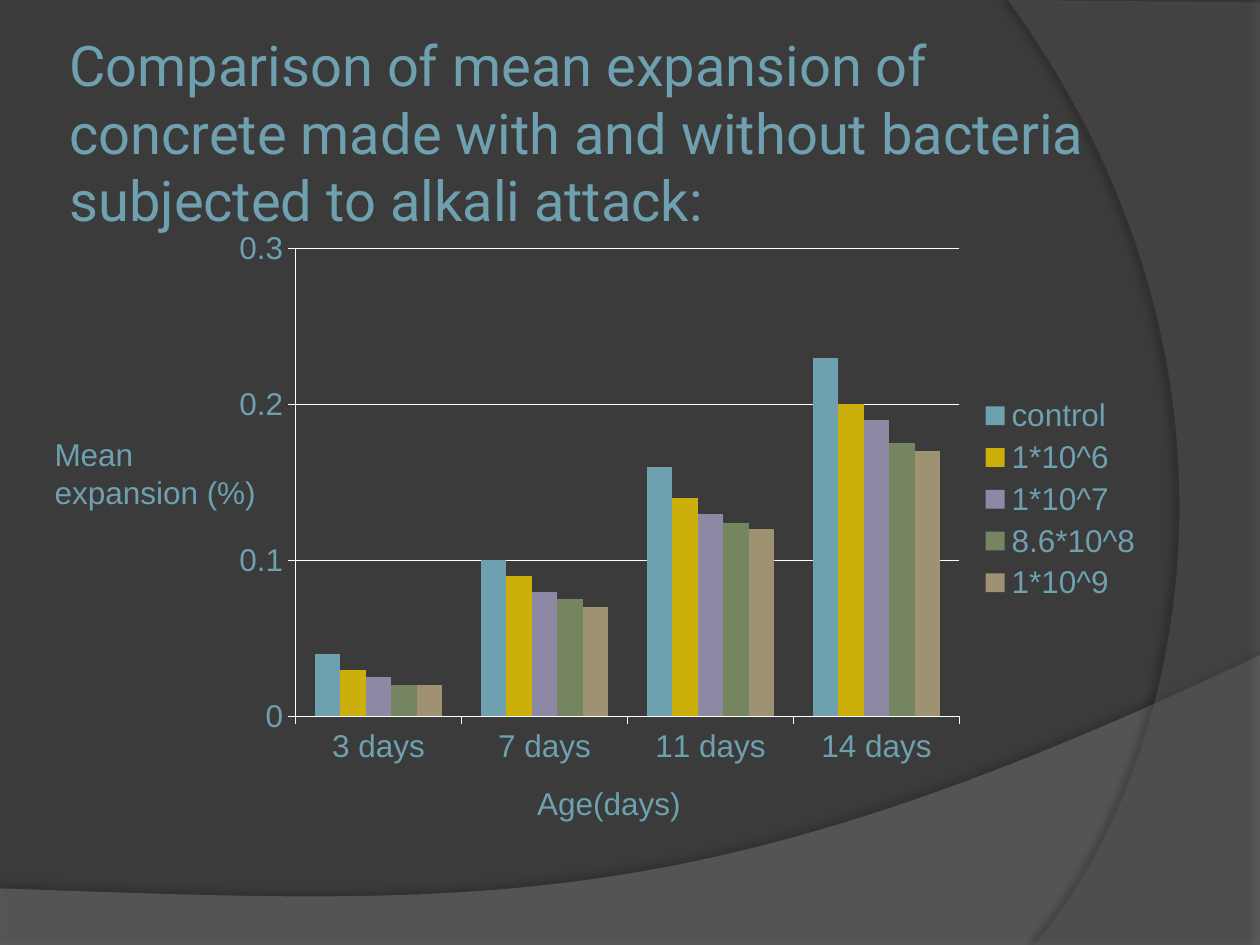
from dataclasses import dataclass

from lxml import etree
from pptx import Presentation
from pptx.chart.data import CategoryChartData
from pptx.dml.color import RGBColor
from pptx.enum.chart import XL_CHART_TYPE, XL_LEGEND_POSITION, XL_TICK_MARK
from pptx.enum.text import MSO_ANCHOR, MSO_AUTO_SIZE
from pptx.oxml import parse_xml
from pptx.oxml.ns import nsdecls, qn
from pptx.util import Cm, Pt

CLUSTERED = XL_CHART_TYPE.COLUMN_CLUSTERED
LEGEND_RIGHT = XL_LEGEND_POSITION.RIGHT
TICK_OUTSIDE, TICK_NONE = XL_TICK_MARK.OUTSIDE, XL_TICK_MARK.NONE
TOP, MIDDLE = MSO_ANCHOR.TOP, MSO_ANCHOR.MIDDLE
GROW, FIXED = MSO_AUTO_SIZE.SHAPE_TO_FIT_TEXT, MSO_AUTO_SIZE.NONE

Point = tuple[float, float]


@dataclass(frozen=True)
class Theme:
    background: str = "3B3B3B"
    text: str = "6EA0B0"
    rule: str = "FFFFFF"
    title_font: str = "Roboto"
    body_font: str = "Arial"
    title_size: int = 32
    body_size: int = 18


@dataclass(frozen=True)
class Swoosh:
    """Straight corners, then a Bezier curve back to the first one (cm)."""
    corners: list[Point]
    controls: tuple[Point, Point]
    end: Point
    color: str
    opacity: int
    shadow_opacity: int
    shadow_distance: float
    shadow_angle: int


@dataclass(frozen=True)
class Label:
    text: str
    box: tuple[float, float, float, float]
    font: str
    size: int
    anchor: MSO_ANCHOR = TOP
    auto_size: MSO_AUTO_SIZE = GROW
    inset: float = 0.25


@dataclass(frozen=True)
class Series:
    name: str
    values: tuple[float, ...]
    color: str


THEME = Theme()
SWOOSHES = [
    Swoosh([(0, 17.91), (0, 19.05), (25.4, 19.05), (25.4, 13.21)],
           ((14.2, 18.52), (9.93, 18.26)), (0, 17.91), "7F7F7F", 45, 35, 3.5, 270),
    Swoosh([(25.4, 0.05), (25.4, 19.05), (20.85, 19.05)],
           ((23.75, 15.72), (25.86, 7.62)), (20.32, 0), "5E5E5E", 40, 45, 4, 180),
]
TITLE = Label("Comparison of mean expansion of concrete made with and without "
              "bacteria subjected to alkali attack:", (1.27, 0.43, 20.75, 4.45),
              THEME.title_font, THEME.title_size, MIDDLE, FIXED, 0.13)
AXIS_LABELS = [
    Label("Mean expansion (%)", (0.85, 8.64, 4.65, 2.57), THEME.body_font, THEME.body_size),
    Label("Age(days)", (10.58, 15.67, 3.76, 1.02), THEME.body_font, THEME.body_size),
]
AGES = ["3 days", "7 days", "11 days", "14 days"]
MIXES = [
    Series("control", (0.04, 0.1, 0.16, 0.23), "6EA0B0"),
    Series("1*10^6", (0.03, 0.09, 0.14, 0.2), "CCAF0A"),
    Series("1*10^7", (0.025, 0.08, 0.13, 0.19), "8D89A4"),
    Series("8.6*10^8", (0.02, 0.075, 0.124, 0.175), "748560"),
    Series("1*10^9", (0.02, 0.07, 0.12, 0.17), "9E9273"),
]
PLOT_AREA = {"x": 0.08, "y": 0.05, "w": 0.71, "h": 0.84}


def rgb(color: str) -> RGBColor:
    return RGBColor.from_string(color)


def bezier(a: Point, b: Point, c: Point, d: Point, steps: int = 60) -> list[Point]:
    points = []
    for i in range(1, steps + 1):
        t = i / steps
        u = 1 - t
        weights = (u**3, 3 * u * u * t, 3 * u * t * t, t**3)
        points.append(tuple(sum(w * p[k] for w, p in zip(weights, (a, b, c, d)))
                            for k in (0, 1)))
    return points


def add_swoosh(slide, swoosh: Swoosh) -> None:
    outline = swoosh.corners + bezier(swoosh.corners[-1], *swoosh.controls, swoosh.end)
    points = [(Cm(x), Cm(y)) for x, y in outline]
    builder = slide.shapes.build_freeform(*points[0])
    builder.add_line_segments(points[1:], close=True)
    sp = builder.convert_to_shape()
    sp.fill.solid()
    sp.fill.fore_color.rgb = rgb(swoosh.color)
    sp.line.fill.background()
    color = sp.fill._xPr.find(qn("a:solidFill"))[0]
    etree.SubElement(color, qn("a:alpha")).set("val", str(swoosh.opacity * 1000))
    sp.shadow.inherit = False
    effects = sp.element.spPr.find(qn("a:effectLst"))
    effects.append(parse_xml(
        f'<a:outerShdw {nsdecls("a")} blurRad="{Pt(4)}" '
        f'dist="{Pt(swoosh.shadow_distance)}" dir="{swoosh.shadow_angle * 60000}" '
        f'algn="ctr" rotWithShape="0"><a:srgbClr val="000000">'
        f'<a:alpha val="{swoosh.shadow_opacity * 1000}"/></a:srgbClr></a:outerShdw>'))


def add_label(slide, label: Label) -> None:
    tf = slide.shapes.add_textbox(*map(Cm, label.box)).text_frame
    tf.word_wrap = True
    tf.auto_size = label.auto_size
    tf.vertical_anchor = label.anchor
    tf.margin_left = tf.margin_right = Cm(label.inset)
    tf.margin_top = tf.margin_bottom = Cm(0.13)
    r = tf.paragraphs[0].add_run()
    r.text = label.text
    r.font.name = label.font
    r.font.size = Pt(label.size)
    r.font.color.rgb = rgb(THEME.text)


def style_line(line) -> None:
    line.color.rgb = rgb(THEME.rule)
    line.width = Pt(0.75)


def style_font(font) -> None:
    font.name = THEME.body_font
    font.size = Pt(THEME.body_size)
    font.color.rgb = rgb(THEME.text)


def place_plot_area(chart) -> None:
    """Fix the inner plot area as fractions of the chart frame."""
    sizes = "".join(f'<c:{key} val="{value}"/>' for key, value in PLOT_AREA.items())
    layout = parse_xml(
        f'<c:layout {nsdecls("c")}><c:manualLayout><c:layoutTarget val="inner"/>'
        f'<c:xMode val="edge"/><c:yMode val="edge"/>{sizes}</c:manualLayout></c:layout>')
    area = chart.element.find(".//" + qn("c:plotArea"))
    for old in area.findall(qn("c:layout")):
        area.remove(old)
    area.insert(0, layout)


def add_expansion_chart(slide) -> None:
    data = CategoryChartData()
    data.categories = AGES
    for mix in MIXES:
        data.add_series(mix.name, mix.values)
    box = map(Cm, (4.45, 4.45, 18.85, 11.23))
    chart = slide.shapes.add_chart(CLUSTERED, *box, data).chart
    chart.has_title = False
    style_font(chart.font)
    chart.has_legend = True
    chart.legend.position = LEGEND_RIGHT
    chart.legend.include_in_layout = False
    style_font(chart.legend.font)

    plot = chart.plots[0]
    plot.vary_by_categories = False
    plot.gap_width, plot.overlap = 150, 0
    for series, mix in zip(plot.series, MIXES):
        series.format.fill.solid()
        series.format.fill.fore_color.rgb = rgb(mix.color)

    for axis in (chart.category_axis, chart.value_axis):
        axis.major_tick_mark, axis.minor_tick_mark = TICK_OUTSIDE, TICK_NONE
        style_line(axis.format.line)
        style_font(axis.tick_labels.font)
    axis = chart.value_axis
    axis.minimum_scale, axis.maximum_scale, axis.major_unit = 0, 0.3, 0.1
    axis.has_major_gridlines = True
    style_line(axis.major_gridlines.format.line)
    place_plot_area(chart)


def main() -> None:
    prs = Presentation()
    prs.slide_width, prs.slide_height = Cm(25.4), Cm(19.05)
    s = prs.slides.add_slide(prs.slide_layouts[6])
    s.background.fill.solid()
    s.background.fill.fore_color.rgb = rgb(THEME.background)
    for swoosh in SWOOSHES:
        add_swoosh(s, swoosh)
    add_label(s, TITLE)
    add_expansion_chart(s)
    for label in AXIS_LABELS:
        add_label(s, label)
    prs.save("out.pptx")


if __name__ == "__main__":
    main()
